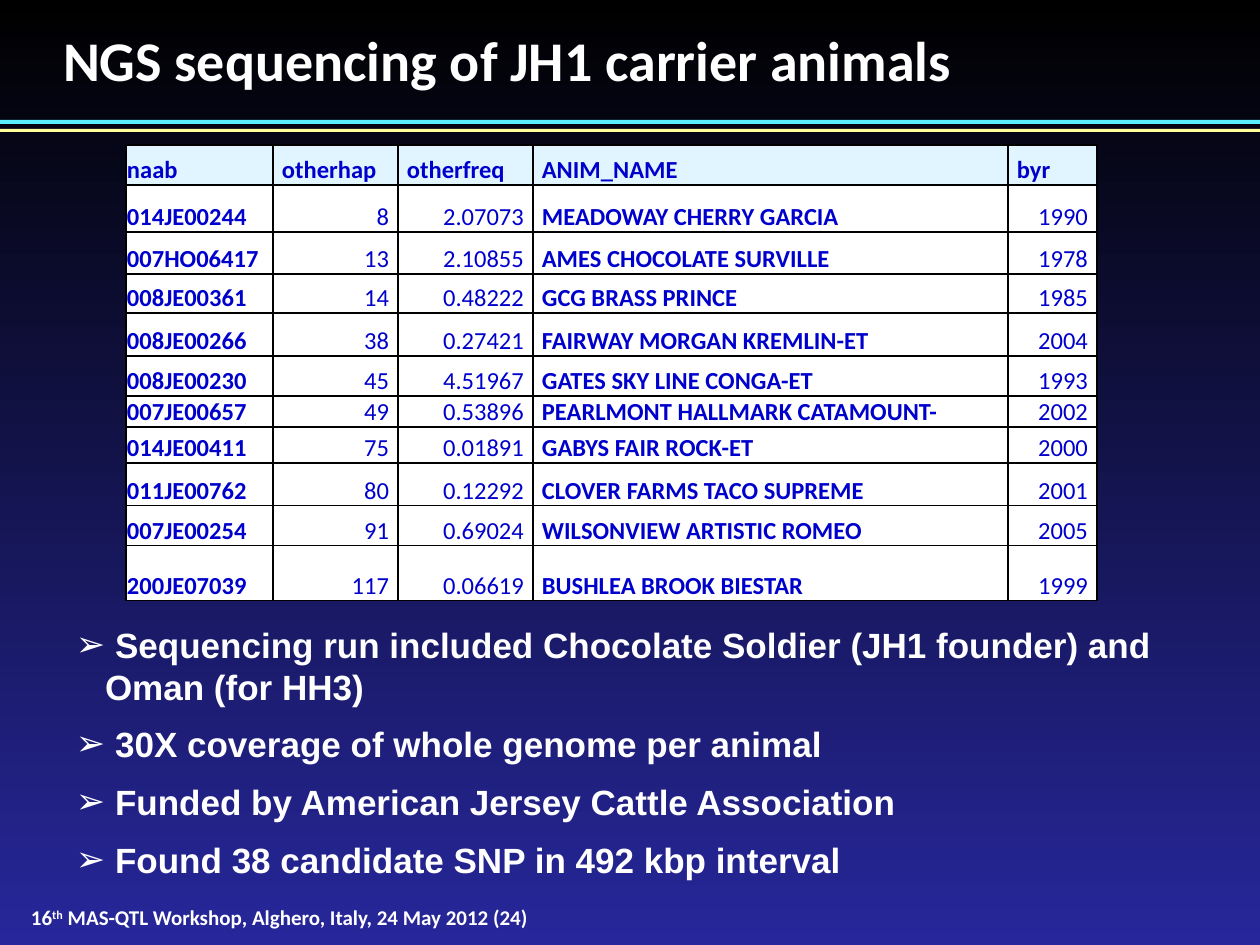
from lxml import etree
from pptx import Presentation
from pptx import util as u
from pptx.dml.color import RGBColor
from pptx.enum import shapes, text
from pptx.oxml import ns

PX_PER_INCH = 126
WHITE, BLACK, NAVY = "FFFFFF", "000000", "0000CC"
HEADER_FILL = "E0F5FF"

COLUMN_WIDTHS = [147, 125, 135, 475, 89]
ROW_HEIGHTS = [40, 47, 42, 39, 43, 40, 31, 36, 43, 40, 55]
NUMERIC_COLUMNS = {1, 2, 4}
ANIMALS = [
    ("naab", "otherhap", "otherfreq", "ANIM_NAME", "byr"),
    ("014JE00244", "8", "2.07073", "MEADOWAY CHERRY GARCIA", "1990"),
    ("007HO06417", "13", "2.10855", "AMES CHOCOLATE SURVILLE", "1978"),
    ("008JE00361", "14", "0.48222", "GCG BRASS PRINCE", "1985"),
    ("008JE00266", "38", "0.27421", "FAIRWAY MORGAN KREMLIN-ET", "2004"),
    ("008JE00230", "45", "4.51967", "GATES SKY LINE CONGA-ET", "1993"),
    ("007JE00657", "49", "0.53896", "PEARLMONT HALLMARK CATAMOUNT-", "2002"),
    ("014JE00411", "75", "0.01891", "GABYS FAIR ROCK-ET", "2000"),
    ("011JE00762", "80", "0.12292", "CLOVER FARMS TACO SUPREME", "2001"),
    ("007JE00254", "91", "0.69024", "WILSONVIEW ARTISTIC ROMEO", "2005"),
    ("200JE07039", "117", "0.06619", "BUSHLEA BROOK BIESTAR", "1999"),
]
FINDINGS = [
    " Sequencing run included Chocolate Soldier (JH1 founder) and Oman (for HH3)",
    " 30X coverage of whole genome per animal",
    " Funded by American Jersey Cattle Association",
    " Found 38 candidate SNP in 492 kbp interval",
]


def px(length):
    return u.Emu(round(length * u.Inches(1) / PX_PER_INCH))


def color(value):
    return RGBColor.from_string(value)


def style(font, name, size, bold=True, fill=WHITE):
    font.name, font.size, font.bold = name, u.Pt(size), bold
    font.color.rgb = color(fill)


def place(shape, left, top, width, height):
    shape.left, shape.top = px(left), px(top)
    shape.width, shape.height = px(width), px(height)


def set_frame(frame, anchor, inset_x=0, inset_y=0):
    frame.word_wrap = True
    frame.auto_size = text.MSO_AUTO_SIZE.NONE
    frame.vertical_anchor = anchor
    frame.margin_left = frame.margin_right = px(inset_x)
    frame.margin_top = frame.margin_bottom = px(inset_y)


def set_background(slide):
    fill = slide.background.fill
    fill.gradient()
    fill.gradient_angle = 270
    for stop, position, value in zip(fill.gradient_stops, (0, 1), (BLACK, "27279B")):
        stop.position = position
        stop.color.rgb = color(value)


def add_rule(slide, top, height, fill):
    rule = slide.shapes.add_shape(
        shapes.MSO_SHAPE.RECTANGLE, 0, px(top), px(1260), px(height))
    rule.shadow.inherit = False
    rule.fill.solid()
    rule.fill.fore_color.rgb = color(fill)
    rule.line.fill.background()


def add_footer(slide):
    footer = slide.shapes.add_textbox(px(31), px(905), px(658), px(25))
    set_frame(footer.text_frame, text.MSO_ANCHOR.MIDDLE)
    line = footer.text_frame.paragraphs[0]
    for words in ("16", "th", " MAS-QTL Workshop, Alghero, Italy, 24 May 2012 (24)"):
        run = line.add_run()
        run.text = words
        if words == "th":
            run.font._element.set("baseline", "30000")
    style(line.font, "Calibri", 12)


def set_title(title):
    place(title, 63, 25, 1134, 81)
    set_frame(title.text_frame, text.MSO_ANCHOR.TOP)
    title.text_frame.text = "NGS sequencing of JH1 carrier animals"
    heading = title.text_frame.paragraphs[0]
    heading.alignment = text.PP_ALIGN.LEFT
    style(heading.font, "Calibri", 32)


def add_borders(cell):
    properties = cell._tc.get_or_add_tcPr()
    for side in ("a:lnL", "a:lnR", "a:lnT", "a:lnB"):
        border = etree.SubElement(properties, ns.qn(side), w=str(u.Pt(1)))
        fill = etree.SubElement(border, ns.qn("a:solidFill"))
        etree.SubElement(fill, ns.qn("a:srgbClr"), val=BLACK)


def fill_cell(cell, value, row, column):
    first = column == 0
    cell.margin_left = cell.margin_right = px(1 if first else 9)
    cell.margin_top = px(1 if first else 0)
    cell.margin_bottom = 0
    cell.vertical_anchor = text.MSO_ANCHOR.BOTTOM
    add_borders(cell)
    cell.fill.solid()
    cell.fill.fore_color.rgb = color(HEADER_FILL if row == 0 else WHITE)

    numeric = row > 0 and column in NUMERIC_COLUMNS
    cell.text = value
    entry = cell.text_frame.paragraphs[0]
    entry.alignment = text.PP_ALIGN.RIGHT if numeric else text.PP_ALIGN.LEFT
    style(entry.font, "Calibri", 14, not numeric, NAVY)


def add_animal_table(slide):
    table = slide.shapes.add_table(
        len(ANIMALS), len(COLUMN_WIDTHS), px(126), px(145),
        px(sum(COLUMN_WIDTHS)), px(sum(ROW_HEIGHTS))).table
    table.first_row = table.horz_banding = False
    for column, width in zip(table.columns, COLUMN_WIDTHS):
        column.width = px(width)
    for row, height in zip(table.rows, ROW_HEIGHTS):
        row.height = px(height)
    for row, animal in enumerate(ANIMALS):
        for column, value in enumerate(animal):
            fill_cell(table.cell(row, column), value, row, column)


def set_findings(body):
    place(body, 63, 617, 1166, 272)
    frame = body.text_frame
    set_frame(frame, text.MSO_ANCHOR.TOP, 13, 6)
    frame.text = "\n".join(FINDINGS)
    for index, finding in enumerate(frame.paragraphs):
        properties = finding._p.get_or_add_pPr()
        properties.set("marL", str(px(29)))
        properties.set("indent", str(px(-29)))
        etree.SubElement(properties, ns.qn("a:buFont"), typeface="Arial")
        etree.SubElement(properties, ns.qn("a:buChar"), char="➢")
        finding.space_before = u.Pt(9 if index else 0)
        style(finding.font, "Arial", 20)


def main():
    deck = Presentation()
    deck.slide_width, deck.slide_height = px(1260), px(945)
    slide = deck.slides.add_slide(deck.slide_layouts[1])

    # Backdrop, double rule and footer
    set_background(slide)
    add_rule(slide, 120, 4, "5BEFFF")
    add_rule(slide, 129, 3, "FFFF99")
    add_footer(slide)

    # Title, carrier table and findings
    set_title(slide.shapes.title)
    add_animal_table(slide)
    set_findings(slide.placeholders[1])

    deck.save("out.pptx")


if __name__ == "__main__":
    main()
